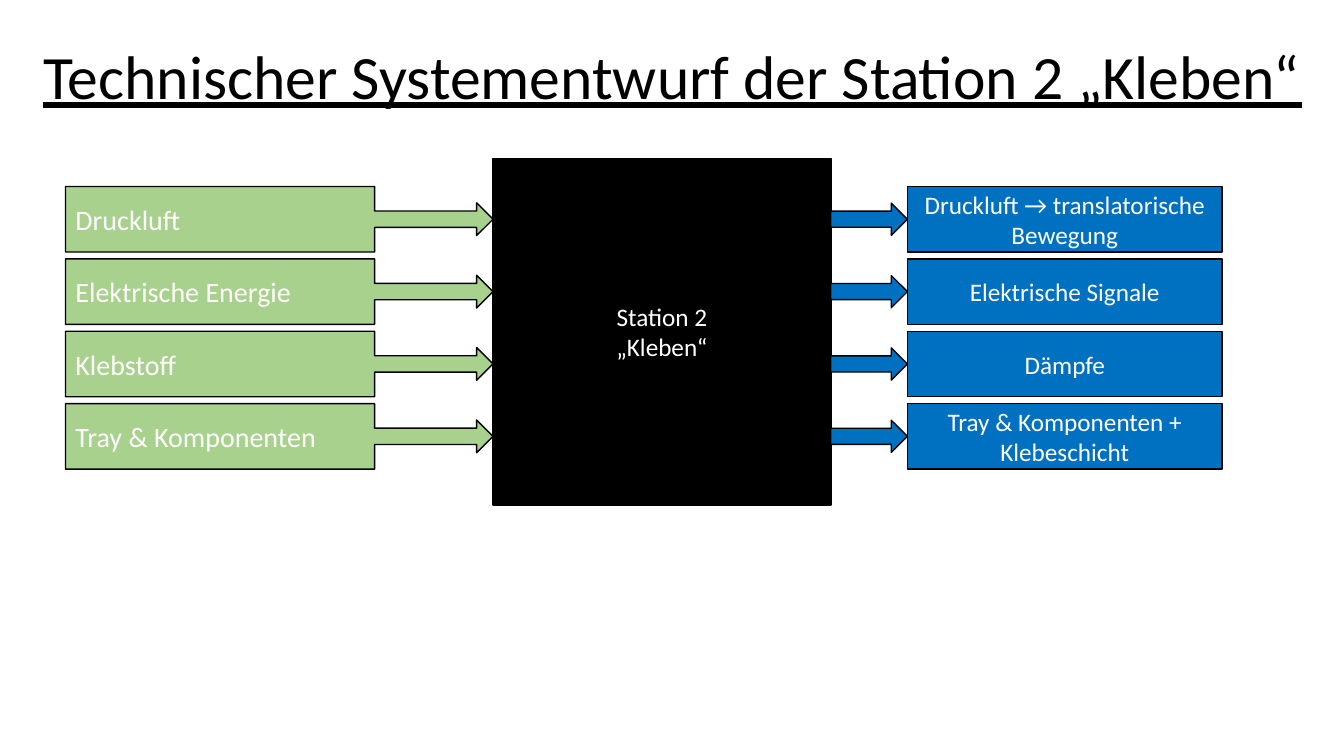
from pptx import Presentation
from pptx.dml.color import RGBColor
from pptx.enum.shapes import MSO_SHAPE as Preset
from pptx.enum.text import MSO_ANCHOR as Anchor, MSO_AUTO_SIZE as AutoSize, PP_ALIGN as Align
from pptx.util import Inches, Pt

BLACK = RGBColor(0x00, 0x00, 0x00)
WHITE = RGBColor(0xFF, 0xFF, 0xFF)
GREEN = RGBColor(0xA9, 0xD1, 0x8E)
BLUE = RGBColor(0x00, 0x70, 0xC0)
FONT = "Calibri"

TITLE_ONLY = 5
ROW_HEIGHT = 0.65
ROW_PITCH = 0.718
ARROW_HEIGHT = 0.32

TITLE = "Technischer Systementwurf der Station 2 „Kleben“"
STATION = ["Station 2", "„Kleben“"]
INPUTS = ["Druckluft", "Elektrische Energie", "Klebstoff", "Tray & Komponenten"]
OUTPUTS = [
    "Druckluft → translatorische Bewegung",
    "Elektrische Signale",
    "Dämpfe",
    "Tray & Komponenten + Klebeschicht",
]


def set_text(shape, lines, size, color, align):
    frame = shape.text_frame
    frame.word_wrap = True
    frame.vertical_anchor = Anchor.MIDDLE
    frame.text = "\n".join(lines)
    for paragraph in frame.paragraphs:
        paragraph.alignment = align
        paragraph.font.name = FONT
        paragraph.font.size = Pt(size)
        paragraph.font.color.rgb = color


def add_block(slide, preset, left, top, width, height, fill):
    shape = slide.shapes.add_shape(
        preset, Inches(left), Inches(top), Inches(width), Inches(height))
    shape.shadow.inherit = False
    shape.fill.solid()
    shape.fill.fore_color.rgb = fill
    shape.line.color.rgb = BLACK
    shape.line.width = Pt(1)
    return shape


def add_title(slide, left, top, width, height):
    title = slide.shapes.title
    title.left, title.top = Inches(left), Inches(top)
    title.width, title.height = Inches(width), Inches(height)
    set_text(title, [TITLE], 44, BLACK, Align.CENTER)
    title.text_frame.auto_size = AutoSize.NONE
    title.text_frame.paragraphs[0].font.underline = True


def add_station(slide, left, top, width, height):
    station = add_block(slide, Preset.FLOWCHART_PROCESS, left, top, width, height, BLACK)
    set_text(station, STATION, 18, WHITE, Align.CENTER)


def add_inputs(slide, left, top, width):
    for row, label in enumerate(INPUTS):
        callout = add_block(slide, Preset.RIGHT_ARROW_CALLOUT, left,
                            top + row * ROW_PITCH, width, ROW_HEIGHT, GREEN)
        callout.adjustments[3] = 0.723  # share of the width taken by the box
        set_text(callout, [label], 20, WHITE, Align.LEFT)


def add_outputs(slide, left, top, width, arrow_width):
    for row, label in enumerate(OUTPUTS):
        row_top = top + row * ROW_PITCH
        arrow_top = row_top + (ROW_HEIGHT - ARROW_HEIGHT) / 2
        add_block(slide, Preset.RIGHT_ARROW, left, arrow_top,
                  arrow_width, ARROW_HEIGHT, BLUE)
        box = add_block(slide, Preset.FLOWCHART_PROCESS, left + arrow_width, row_top,
                        width - arrow_width, ROW_HEIGHT, BLUE)
        set_text(box, [label], 18, WHITE, Align.CENTER)


def main():
    presentation = Presentation()
    presentation.slide_width = Inches(13.33)
    presentation.slide_height = Inches(7.5)
    slide = presentation.slides.add_slide(presentation.slide_layouts[TITLE_ONLY])

    # Heading
    add_title(slide, 0.3, 0.32, 12.74, 0.84)
    # Black box with inputs on the left and outputs on the right
    add_station(slide, 4.89, 1.57, 3.35, 3.44)
    add_inputs(slide, 0.65, 1.85, 4.24)
    add_outputs(slide, 8.24, 1.85, 3.88, 0.76)

    presentation.save("out.pptx")


if __name__ == "__main__":
    main()
